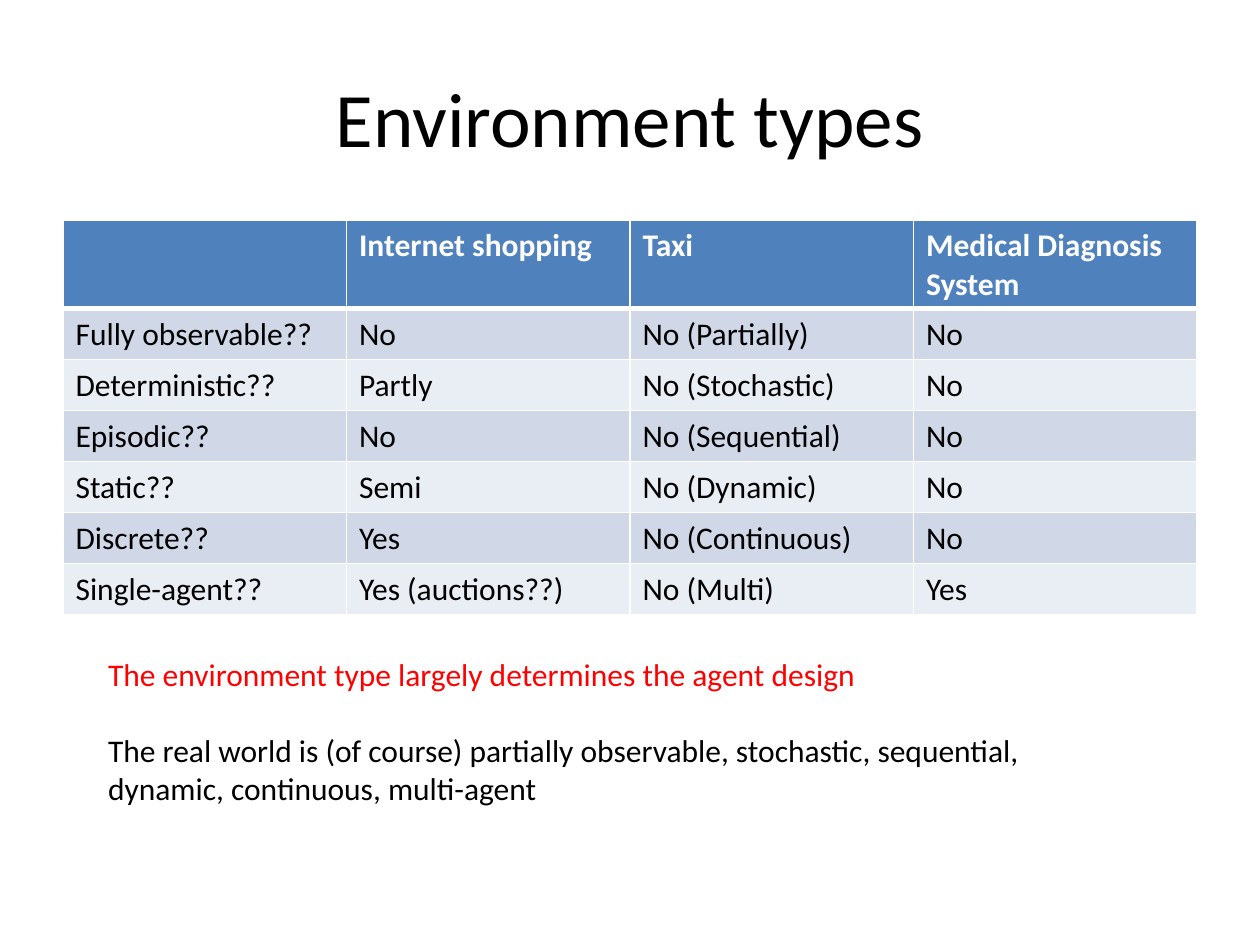
from dataclasses import dataclass

from lxml import etree
from pptx import Presentation
from pptx import util as u
from pptx.dml.color import RGBColor
from pptx.enum import text
from pptx.oxml.ns import qn


@dataclass(frozen=True)
class Theme:
    font: str = "Calibri"
    title_size: int = 44
    body_size: int = 18
    ink: str = "000000"
    white: str = "FFFFFF"
    accent: str = "FF0000"
    header: str = "4F81BD"
    bands: tuple[str, str] = ("D0D8E8", "E9EDF4")
    rule: int = 1
    header_rule: int = 3


@dataclass(frozen=True)
class Line:
    words: str
    size: int
    color: str
    bold: bool = False
    align: text.PP_ALIGN = text.PP_ALIGN.LEFT
    before: int = 0


@dataclass(frozen=True)
class Box:
    left: float
    top: float
    width: float
    height: float

    def lengths(self) -> list[u.Length]:
        return [u.Inches(v) for v in (self.left, self.top, self.width, self.height)]


THEME = Theme()
HEADER_HEIGHT, ROW_HEIGHT = 0.7, 0.405
ROWS = [
    ("", "Internet shopping", "Taxi", "Medical Diagnosis System"),
    ("Fully observable??", "No", "No (Partially)", "No"),
    ("Deterministic??", "Partly", "No (Stochastic)", "No"),
    ("Episodic??", "No", "No (Sequential)", "No"),
    ("Static??", "Semi", "No (Dynamic)", "No"),
    ("Discrete??", "Yes", "No (Continuous)", "No"),
    ("Single-agent??", "Yes (auctions??)", "No (Multi)", "Yes"),
]
TITLE = Line("Environment types", THEME.title_size, THEME.ink, align=text.PP_ALIGN.CENTER)
REMARKS = [
    Line("The environment type largely determines the agent design",
         THEME.body_size, THEME.accent),
    Line("The real world is (of course) partially observable, stochastic, sequential,",
         THEME.body_size, THEME.ink, before=22),
    Line("dynamic, continuous, multi-agent", THEME.body_size, THEME.ink),
]


def write_line(p, line: Line) -> None:
    """Put one styled line into a paragraph."""
    p.text = line.words
    p.alignment = line.align
    p.space_before = u.Pt(line.before)
    p.font.name = THEME.font
    p.font.size = u.Pt(line.size)
    p.font.bold = line.bold
    p.font.color.rgb = RGBColor.from_string(line.color)


def add_text(s, box: Box, lines: list[Line], anchor: text.MSO_ANCHOR) -> None:
    """Add a wrapping text box with one paragraph per line."""
    tf = s.shapes.add_textbox(*box.lengths()).text_frame
    tf.word_wrap = True
    tf.vertical_anchor = anchor
    for i, line in enumerate(lines):
        write_line(tf.add_paragraph() if i else tf.paragraphs[0], line)


def add_borders(cell, row: int) -> None:
    """Draw white rules around a cell, heavier below the header."""
    heavy = {0: "lnB", 1: "lnT"}.get(row)
    tc_pr = cell._tc.get_or_add_tcPr()
    for side in ("lnL", "lnR", "lnT", "lnB"):
        width = THEME.header_rule if side == heavy else THEME.rule
        ln = etree.SubElement(tc_pr, qn(f"a:{side}"), w=str(u.Pt(width)))
        fill = etree.SubElement(ln, qn("a:solidFill"))
        etree.SubElement(fill, qn("a:srgbClr"), val=THEME.white)


def add_table(s, box: Box, rows: list[tuple[str, ...]]) -> None:
    """Add the banded table of environments."""
    table = s.shapes.add_table(len(rows), len(rows[0]), *box.lengths()).table
    for r, values in enumerate(rows):
        is_header = r == 0
        table.rows[r].height = u.Inches(HEADER_HEIGHT if is_header else ROW_HEIGHT)
        color = THEME.white if is_header else THEME.ink
        band = THEME.header if is_header else THEME.bands[(r - 1) % 2]
        for c, words in enumerate(values):
            cell = table.cell(r, c)
            write_line(cell.text_frame.paragraphs[0],
                       Line(words, THEME.body_size, color, bold=is_header))
            add_borders(cell, r)
            cell.fill.solid()
            cell.fill.fore_color.rgb = RGBColor.from_string(band)


def main() -> None:
    """Build and save the slide."""
    prs = Presentation()
    prs.slide_width, prs.slide_height = u.Inches(10), u.Inches(7.5)
    s = prs.slides.add_slide(prs.slide_layouts[6])
    add_text(s, Box(0.5, 0.3, 9, 1.25), [TITLE], text.MSO_ANCHOR.MIDDLE)
    add_table(s, Box(0.5, 1.75, 9, 3.13), ROWS)
    add_text(s, Box(0.76, 5.15, 8.43, 1.31), REMARKS, text.MSO_ANCHOR.TOP)
    prs.save("out.pptx")


if __name__ == "__main__":
    main()
